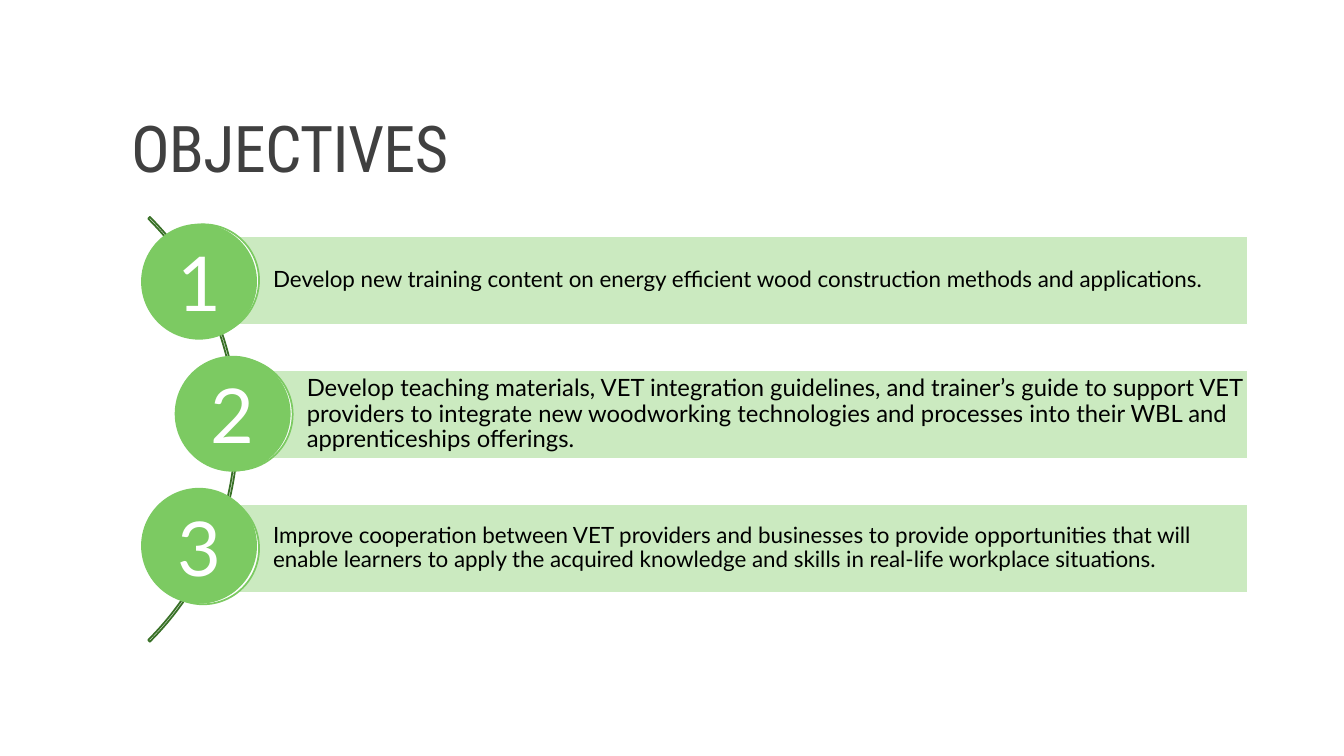
from dataclasses import dataclass

from pptx import Presentation
from pptx.dml.color import RGBColor
from pptx.enum.shapes import MSO_SHAPE
from pptx.enum.text import MSO_ANCHOR, MSO_AUTO_SIZE, PP_ALIGN
from pptx.util import Inches, Pt

SLIDE_WIDTH, SLIDE_HEIGHT = Inches(13.33), Inches(7.5)
GRID_COLUMNS, GRID_ROWS = 40, 30


@dataclass(frozen=True)
class Theme:
    heading_font: str = "Roboto Condensed"
    body_font: str = "Lato"
    heading: str = "404040"
    text: str = "000000"
    white: str = "FFFFFF"
    green: str = "7CCA62"
    pale_green: str = "CBEAC0"
    dark_green: str = "387026"
    heading_size: float = 46
    number_size: float = 54
    line_width: float = 1.25


THEME = Theme()

# Text, type size, indent of the row in columns
OBJECTIVES = [
    ("Develop new training content on energy efficient wood construction "
     "methods and applications.", 16, 0),
    ("Develop teaching materials, VET integration guidelines, and trainer’s "
     "guide to support VET providers to integrate new woodworking technologies "
     "and processes into their WBL and apprenticeships offerings.", 17, 1),
    ("Improve cooperation between VET providers and businesses to provide "
     "opportunities that will enable learners to apply the acquired knowledge "
     "and skills in real-life workplace situations.", 16, 0),
]

# Columns and rows of the objective list
BAR_LEFT, BAR_RIGHT, BAR_TOP, BAR_HEIGHT, BAR_PITCH = 6.03, 37.13, 9.36, 3.52, 5.32
RING_LEFT, RING_RISE, RING_SIZE = 4.38, 0.46, 3.33
BADGE_LEFT, BADGE_TOP, BADGE_SIZE, BADGE_PITCH = 4.2, 8.88, 3.45, 5.24


def columns(count):
    return round(SLIDE_WIDTH * count / GRID_COLUMNS)


def rows(count):
    return round(SLIDE_HEIGHT * count / GRID_ROWS)


def style_paragraph(paragraph, font_name, size, color, align=PP_ALIGN.LEFT):
    paragraph.alignment = align
    font = paragraph.font
    font.name, font.size = font_name, Pt(size)
    font.color.rgb = RGBColor.from_string(color)


def add_figure(slide, preset, left, top, width, height, fill=None, line=None):
    figure = slide.shapes.add_shape(preset, left, top, width, height)
    figure.shadow.inherit = False
    if fill:
        figure.fill.solid()
        figure.fill.fore_color.rgb = RGBColor.from_string(fill)
    else:
        figure.fill.background()
    if line:
        figure.line.color.rgb = RGBColor.from_string(line)
        figure.line.width = Pt(THEME.line_width)
    else:
        figure.line.fill.background()
    return figure


def add_circle(slide, left, top, size, fill, line=None):
    return add_figure(slide, MSO_SHAPE.OVAL, columns(left), rows(top),
                      columns(size), columns(size), fill, line)


def add_title(slide, text):
    title = slide.shapes.title
    title.left, title.top = columns(3.6), rows(1.24)
    title.width, title.height = columns(33), rows(6.36)
    frame = title.text_frame
    frame.text = text
    frame.auto_size = MSO_AUTO_SIZE.NONE
    frame.vertical_anchor = MSO_ANCHOR.BOTTOM
    heading = frame.paragraphs[0]
    heading.line_spacing = 0.9
    style_paragraph(heading, THEME.heading_font, THEME.heading_size, THEME.heading)
    # Letter spacing, in hundredths of a point
    heading.runs[0]._r.get_or_add_rPr().set("spc", "-50")


def add_arc(slide):
    arc = add_figure(slide, MSO_SHAPE.BLOCK_ARC, columns(-10.8), rows(5.12),
                     columns(17.88), columns(17.88), line=THEME.dark_green)
    # Start angle, end angle and band thickness
    for index, value in enumerate((189, 27, 0.004)):
        arc.adjustments[index] = value


def add_objective(slide, index, text, size, indent):
    left, top = BAR_LEFT + indent, BAR_TOP + index * BAR_PITCH
    bar = add_figure(slide, MSO_SHAPE.RECTANGLE, columns(left), rows(top),
                     columns(BAR_RIGHT - left), rows(BAR_HEIGHT),
                     THEME.pale_green, THEME.white)
    frame = bar.text_frame
    frame.word_wrap = True
    frame.vertical_anchor = MSO_ANCHOR.MIDDLE
    frame.margin_left = Inches(0.7)
    frame.margin_top = frame.margin_right = frame.margin_bottom = Inches(0.04)
    frame.text = text
    objective = frame.paragraphs[0]
    objective.line_spacing = 0.9
    style_paragraph(objective, THEME.body_font, size, THEME.text)
    add_circle(slide, RING_LEFT + indent, top - RING_RISE, RING_SIZE,
               THEME.white, THEME.green)


def add_badge(slide, index, indent):
    badge = add_circle(slide, BADGE_LEFT + indent, BADGE_TOP + index * BADGE_PITCH,
                       BADGE_SIZE, THEME.green)
    frame = badge.text_frame
    frame.vertical_anchor = MSO_ANCHOR.MIDDLE
    frame.text = str(index + 1)
    style_paragraph(frame.paragraphs[0], THEME.body_font, THEME.number_size,
                    THEME.white, PP_ALIGN.CENTER)


def main():
    deck = Presentation()
    deck.slide_width, deck.slide_height = SLIDE_WIDTH, SLIDE_HEIGHT
    slide = deck.slides.add_slide(deck.slide_layouts[5])

    add_title(slide, "OBJECTIVES")
    add_arc(slide)

    # Bars with their rings, then the numbers on top
    for index, (text, size, indent) in enumerate(OBJECTIVES):
        add_objective(slide, index, text, size, indent)
    for index, (_, _, indent) in enumerate(OBJECTIVES):
        add_badge(slide, index, indent)

    deck.save("out.pptx")


if __name__ == "__main__":
    main()
